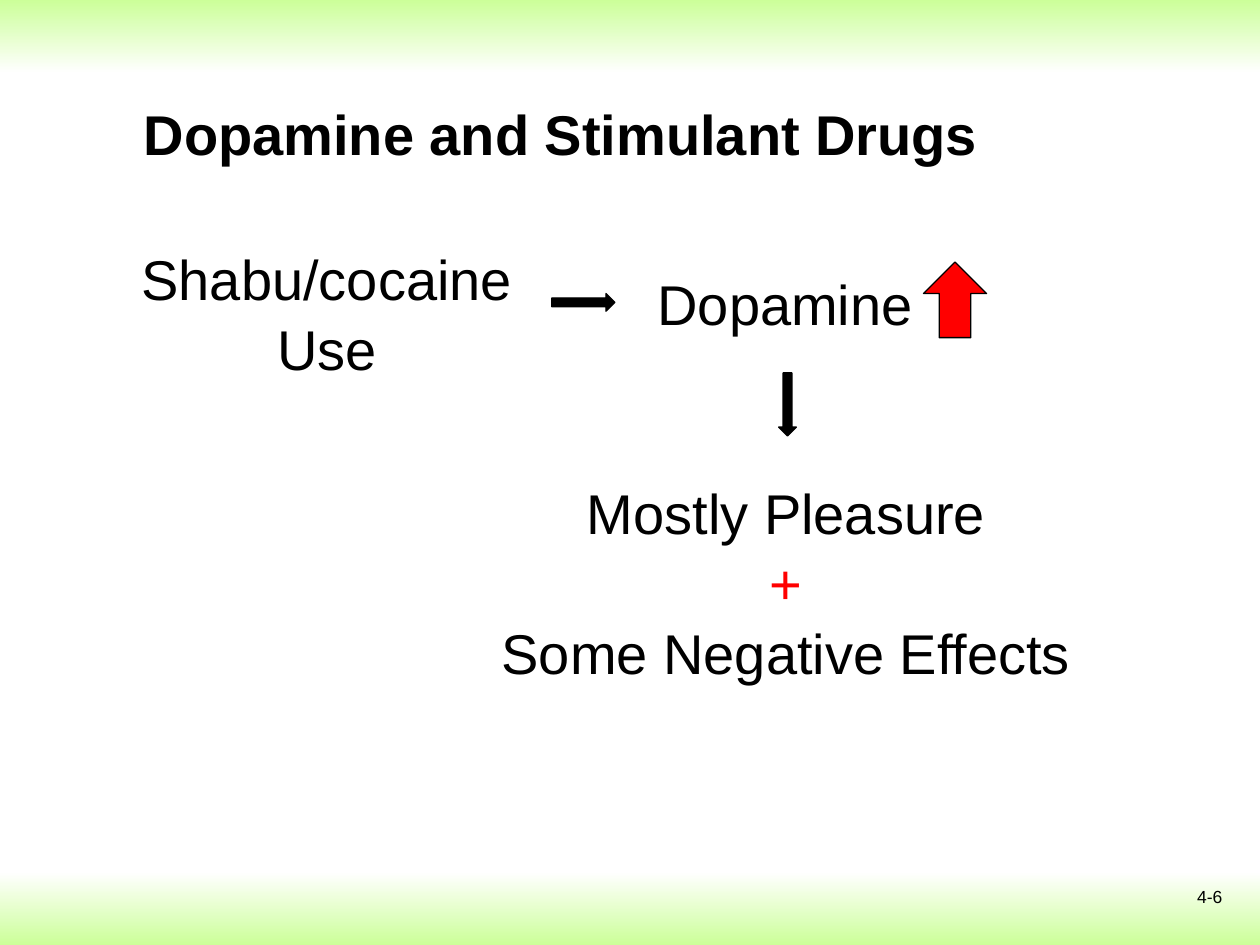
"""Build the slide on dopamine and stimulant drugs."""
import pptx
import pptx.dml.color
import pptx.enum.shapes
import pptx.enum.text
import pptx.util

Inches = pptx.util.Inches
RGBColor = pptx.dml.color.RGBColor
MSO_SHAPE = pptx.enum.shapes.MSO_SHAPE
PP_ALIGN = pptx.enum.text.PP_ALIGN
MSO_ANCHOR = pptx.enum.text.MSO_ANCHOR

BLACK = RGBColor(0x00, 0x00, 0x00)
WHITE = RGBColor(0xFF, 0xFF, 0xFF)
RED = RGBColor(0xFF, 0x00, 0x00)
GREEN = RGBColor(0xCC, 0xFF, 0x99)


def write(sp, lines, align, size=32, bold=False, wrap=True, anchor=MSO_ANCHOR.TOP, spacing=1.04):
    """Fill a shape with one paragraph of (text, colour) lines."""
    tf = sp.text_frame
    for name, value in {"word_wrap": wrap, "vertical_anchor": anchor}.items():
        setattr(tf, name, value)
    p = tf.paragraphs[0]
    for name, value in {"alignment": align, "line_spacing": spacing}.items():
        setattr(p, name, value)
    for i, (text, color) in enumerate(lines):
        if i:
            p.add_line_break()
        r = p.add_run()
        r.text = text
        for name, value in {"name": "Arial", "size": pptx.util.Pt(size), "bold": bold}.items():
            setattr(r.font, name, value)
        r.font.color.rgb = color


prs = pptx.Presentation()
prs.slide_width, prs.slide_height = Inches(10), Inches(7.5)
s = prs.slides.add_slide(prs.slide_layouts[5])
s.background.fill.solid()
s.background.fill.fore_color.rgb = WHITE

for top, colors in [(6.92, (WHITE, GREEN)), (0, (GREEN, WHITE))]:
    sp = s.shapes.add_shape(MSO_SHAPE.RECTANGLE, 0, Inches(top), prs.slide_width, Inches(0.58))
    sp.shadow.inherit = False
    sp.line.fill.background()
    sp.fill.gradient()
    sp.fill.gradient_angle = 270
    for stop, position, color in zip(sp.fill.gradient_stops, (0, 1), colors):
        stop.position = position
        stop.color.rgb = color

title = s.shapes.title
for name, value in {"left": 1.04, "top": 0.43, "width": 8.42, "height": 1.25}.items():
    setattr(title, name, Inches(value))
write(title, [("Dopamine and Stimulant Drugs", BLACK)], PP_ALIGN.LEFT,
      bold=True, anchor=MSO_ANCHOR.MIDDLE, spacing=1)

effects = [("Mostly Pleasure", BLACK), ("+", RED), ("Some Negative Effects", BLACK)]
texts = [
    ((7.47, 6.98, 2.33, 0.52), [("4-6", BLACK)], PP_ALIGN.RIGHT, {"size": 10}),
    ((0.92, 1.87, 3.35, 1.18), [("Shabu/cocaine Use", BLACK)], PP_ALIGN.CENTER, {}),
    ((5.12, 2.07, 2.24, 0.64), [("Dopamine", BLACK)], PP_ALIGN.LEFT, {"wrap": False}),
    ((3.39, 3.73, 5.7, 1.72), effects, PP_ALIGN.CENTER, {}),
]
for box, lines, align, options in texts:
    write(s.shapes.add_textbox(*map(Inches, box)), lines, align, **options)

arrows = [
    (MSO_SHAPE.UP_ARROW, (7.33, 2.08, 0.5, 0.6), RED, 0),
    (MSO_SHAPE.RIGHT_ARROW, (4.38, 2.33, 0.5, 0.14), BLACK, 0),
    (MSO_SHAPE.RIGHT_ARROW, (6, 3.14, 0.5, 0.14), BLACK, 90),
]
for kind, box, color, rotation in arrows:
    sp = s.shapes.add_shape(kind, *map(Inches, box))
    sp.shadow.inherit = False
    sp.rotation = rotation
    sp.fill.solid()
    sp.fill.fore_color.rgb = color
    sp.line.color.rgb = BLACK
    sp.line.width = pptx.util.Pt(0.75)

prs.save("out.pptx")
